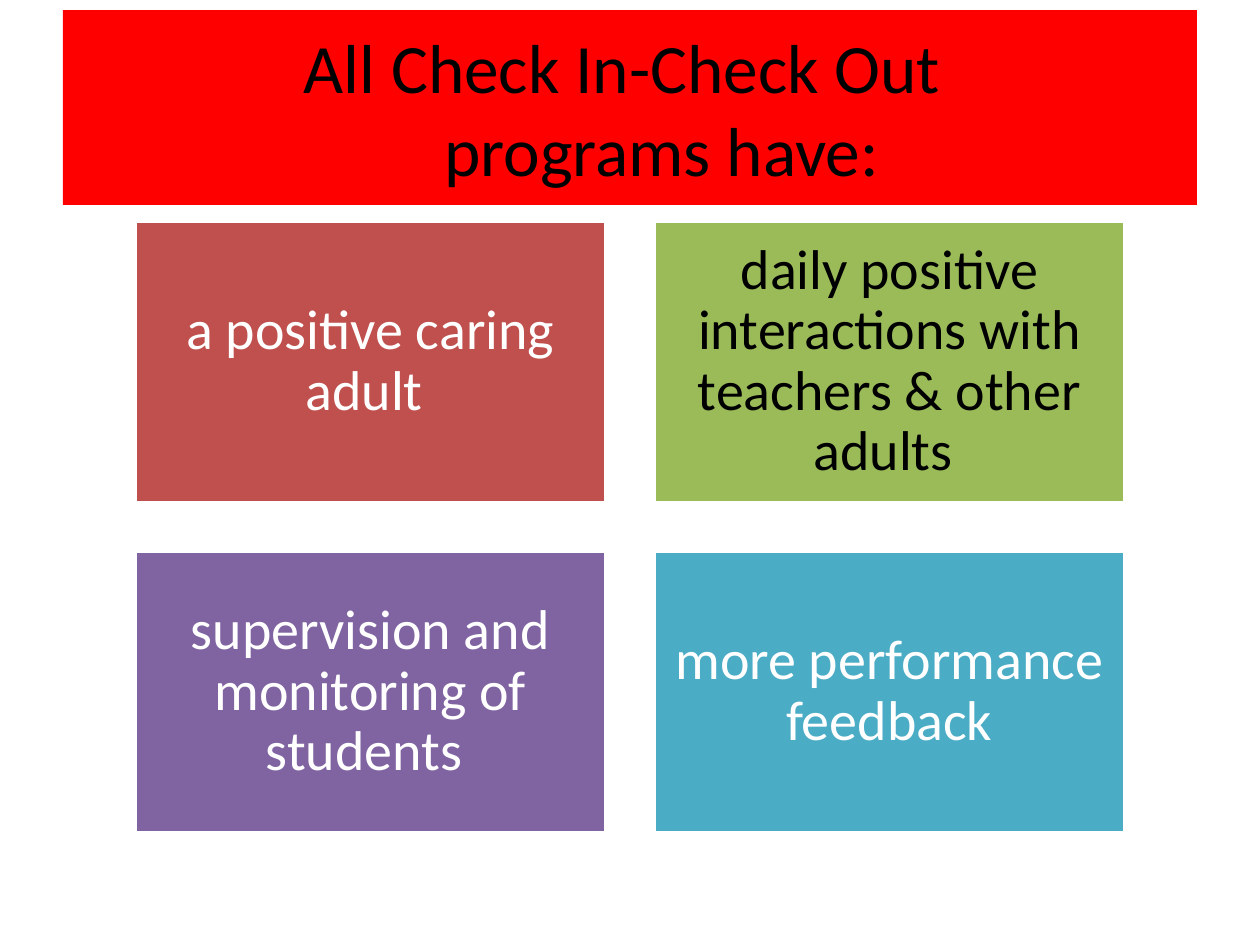
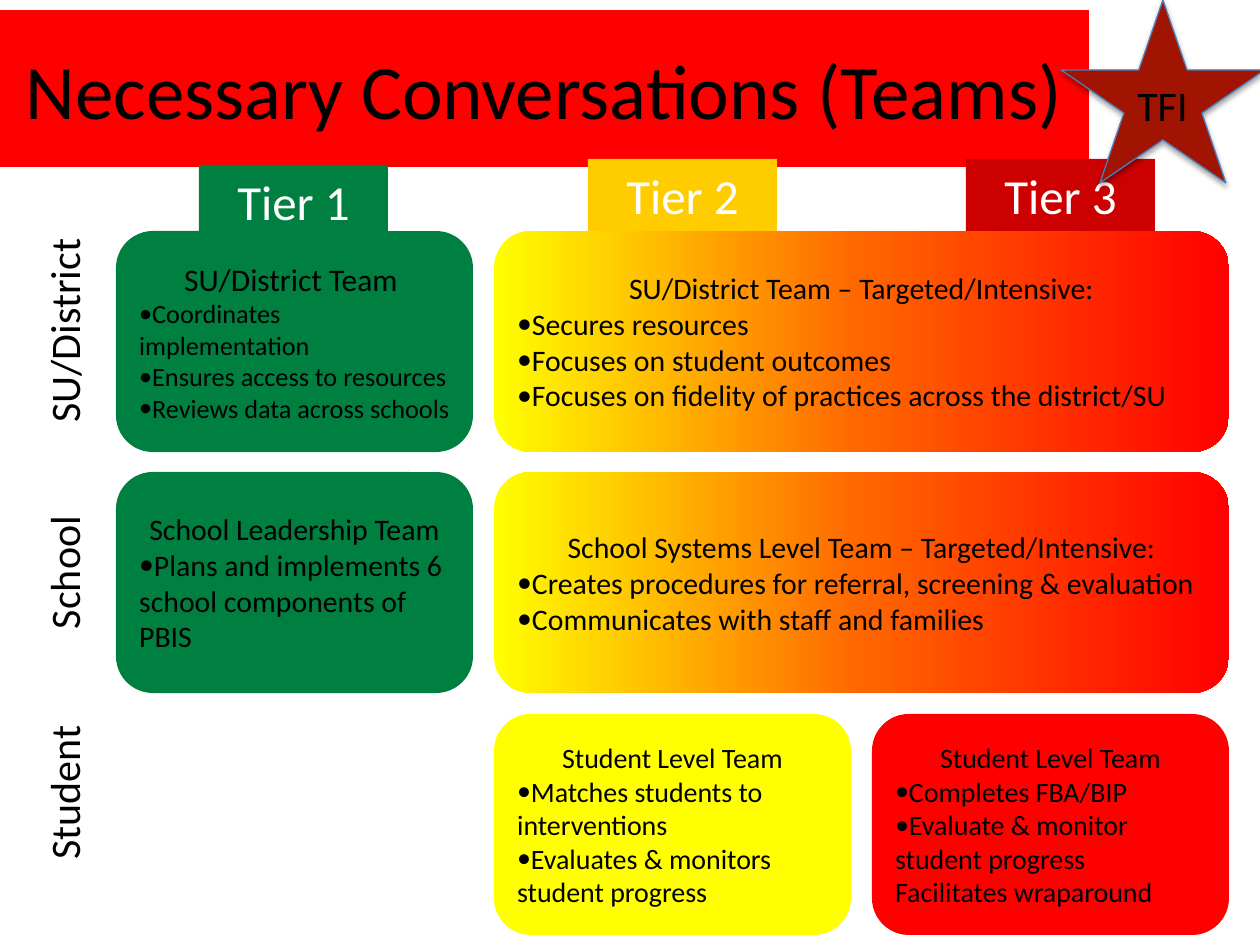
from copy import deepcopy
from dataclasses import dataclass
from itertools import product
from lxml.etree import SubElement as Sub
from pptx import Presentation
from pptx.dml.color import RGBColor as Rgb
from pptx.enum.shapes import MSO_SHAPE as Kind
from pptx.enum.text import MSO_ANCHOR as Anchor, PP_ALIGN as Align
from pptx.oxml.ns import qn
from pptx.util import Pt

SCALE = 914400 / 126
FACE = "Calibri"
HEX = {
    "black": "000000", "white": "FFFFFF", "red": "FF0000", "green": "008040",
    "yellow": "FFFF00", "orange": "FF6600", "amber": "FFCC00", "crimson": "CC0000",
    "brick": "C0504D", "lime": "9BBB59", "purple": "8064A2", "teal": "4BACC6",
    "rust": "A11402", "blue": "4B7EBC",
}
BLEND = ("yellow", "orange", "red")
FRAME = {"word_wrap": True, "vertical_anchor": Anchor.MIDDLE}
TOP = {"vertical_anchor": Anchor.TOP}
CARD = {side: round(16 * SCALE) for side in
        ("margin_left", "margin_top", "margin_right", "margin_bottom")}


@dataclass
class Line:
    text: str
    size: float
    ink: str = "black"
    dot: bool = False
    align: Align = Align.CENTER
    space: float = 1.0


@dataclass
class Box:
    x: int
    y: int
    w: int
    h: int
    lines: list[Line]
    fill: str | tuple[str, ...] = ""
    kind: Kind = Kind.RECTANGLE
    edge: tuple[str, float] | None = None


@dataclass
class Team:
    col: int
    row: int
    wide: bool
    fill: str | tuple[str, ...]
    head: str
    size: int
    tasks: list[str]
    small: int = 0
    last: str = ""


def px(num: float) -> int:
    return round(num * SCALE)


def tint(name: str) -> Rgb:
    return Rgb.from_string(HEX[name])


def blend(shape, names: tuple[str, ...]) -> None:
    shape.fill.gradient()
    shape.fill.gradient_angle = 0
    stops = shape._element.spPr.find(".//" + qn("a:gsLst"))
    stops.insert(1, deepcopy(stops[0]))
    for at, (stop, name) in enumerate(zip(shape.fill.gradient_stops, names)):
        stop.position = at / (len(names) - 1)
        stop.color.rgb = tint(name)


def write(frame, lines: list[Line]) -> None:
    for at, line in enumerate(lines):
        para = frame.add_paragraph() if at else frame.paragraphs[0]
        para.text = line.text
        if line.dot:
            props = para._p.get_or_add_pPr()
            props.set("marL", "0")
            props.set("indent", "0")
            Sub(props, qn("a:buFont"), typeface=FACE)
            Sub(props, qn("a:buChar"), char="•")
        for key, val in {"alignment": line.align, "line_spacing": line.space}.items():
            setattr(para, key, val)
        for run in para.runs:
            for key, val in {"name": FACE, "size": Pt(line.size)}.items():
                setattr(run.font, key, val)
            run.font.color.rgb = tint(line.ink)


def draw(slide, box: Box, form: dict | None = None):
    area = [px(num) for num in (box.x, box.y, box.w, box.h)]
    if box.fill:
        shape = slide.shapes.add_shape(box.kind, *area)
        shape.shadow.inherit = False
        if isinstance(box.fill, tuple):
            blend(shape, box.fill)
        else:
            shape.fill.solid()
            shape.fill.fore_color.rgb = tint(box.fill)
        if box.edge:
            shape.line.color.rgb = tint(box.edge[0])
            shape.line.width = Pt(box.edge[1])
        else:
            shape.line.fill.background()
    else:
        shape = slide.shapes.add_textbox(*area)
    for key, val in {**FRAME, **(form or {})}.items():
        setattr(shape.text_frame, key, val)
    write(shape.text_frame, box.lines)
    return shape


def title(slide, x: int, w: int, h: int, text: str, size: float) -> None:
    draw(slide, Box(x, 10, w, h, [Line(text, size)], "red"))


def team(slide, item: Team) -> None:
    small = item.small or item.size
    lines = [Line(item.head, item.size)]
    lines += [Line(task, small, dot=True, align=Align.LEFT) for task in item.tasks]
    if item.last:
        lines.append(Line(item.last, small, align=Align.LEFT))
    draw(slide, Box(116 + 378 * item.col, 231 + 483 * item.row // 2,
                    735 if item.wide else 357, 221, lines, item.fill,
                    Kind.ROUNDED_RECTANGLE))


def shade(shape) -> None:
    props = shape._element.spPr
    glow = Sub(props.find(qn("a:effectLst")), qn("a:outerShdw"), blurRad="40000",
               dist="23000", dir="5400000", rotWithShape="0")
    ink = Sub(glow, qn("a:srgbClr"), val=HEX["black"])
    Sub(ink, qn("a:alpha"), val="35000")


CARDS = [
    ("a positive caring adult ", "brick", "white"),
    ("daily positive interactions with teachers & other adults ", "lime", "black"),
    ("supervision and monitoring of students ", "purple", "white"),
    ("more performance feedback", "teal", "white"),
]
TAGS = [
    ("Tier 1", 199, 165, "green"),
    ("Tier 2", 588, 159, "amber"),
    ("Tier 3", 966, 159, "crimson"),
]
TEAMS = [
    Team(0, 0, False, "green", "SU/District Team ", 18,
         ["Coordinates implementation", "Ensures access to resources",
          "Reviews data across schools"], 15),
    Team(1, 0, True, BLEND, "SU/District Team – Targeted/Intensive:", 17,
         ["Secures resources", "Focuses on student outcomes",
          "Focuses on fidelity of practices across the district/SU"]),
    Team(0, 1, False, "green", "School Leadership Team", 17,
         ["Plans and implements 6 school components of PBIS"]),
    Team(1, 1, True, BLEND, "School Systems Level Team – Targeted/Intensive:", 17,
         ["Creates procedures for referral, screening & evaluation",
          "Communicates with staff and families"]),
    Team(1, 2, False, "yellow", "Student Level Team", 16,
         ["Matches students to interventions",
          "Evaluates & monitors student progress"]),
    Team(2, 2, False, "red", "Student Level Team", 16,
         ["Completes FBA/BIP", "Evaluate & monitor student progress"],
         last="Facilitates wraparound"),
]
SIDES = [("SU/District", 299), ("School", 541), ("Student", 761)]


def needs(slide) -> None:
    title(slide, 63, 1134, 195, "All Check In-Check Out \v\tprograms have:", 39.6)
    for (row, col), (text, fill, ink) in zip(product(range(2), repeat=2), CARDS):
        draw(slide, Box(135 + 519 * col, 221 + 330 * row, 471, 282,
                        [Line(text, 32, ink, space=0.9)], fill,
                        edge=("white", 2)), CARD)


def teams(slide) -> None:
    title(slide, 0, 1089, 157, "Necessary Conversations (Teams)", 44)
    for text, x, y, fill in TAGS:
        draw(slide, Box(x, y, 189, 72, [Line(text, 28, "white")], fill), TOP)
    for item in TEAMS:
        team(slide, item)
    for text, y in SIDES:
        draw(slide, Box(-47, y, 221, 63, [Line(text, 24)]), TOP).rotation = 270
    shade(draw(slide, Box(1061, 0, 204, 183, [], "rust", Kind.STAR_5_POINT,
                          ("blue", 0.75))))
    draw(slide, Box(1118, 73, 89, 37, [Line("TFI", 24)]), TOP)


def main() -> None:
    deck = Presentation()
    deck.slide_width, deck.slide_height = px(1260), px(945)
    for build in (needs, teams):
        build(deck.slides.add_slide(deck.slide_layouts[6]))
    deck.save("out.pptx")


if __name__ == "__main__":
    main()
